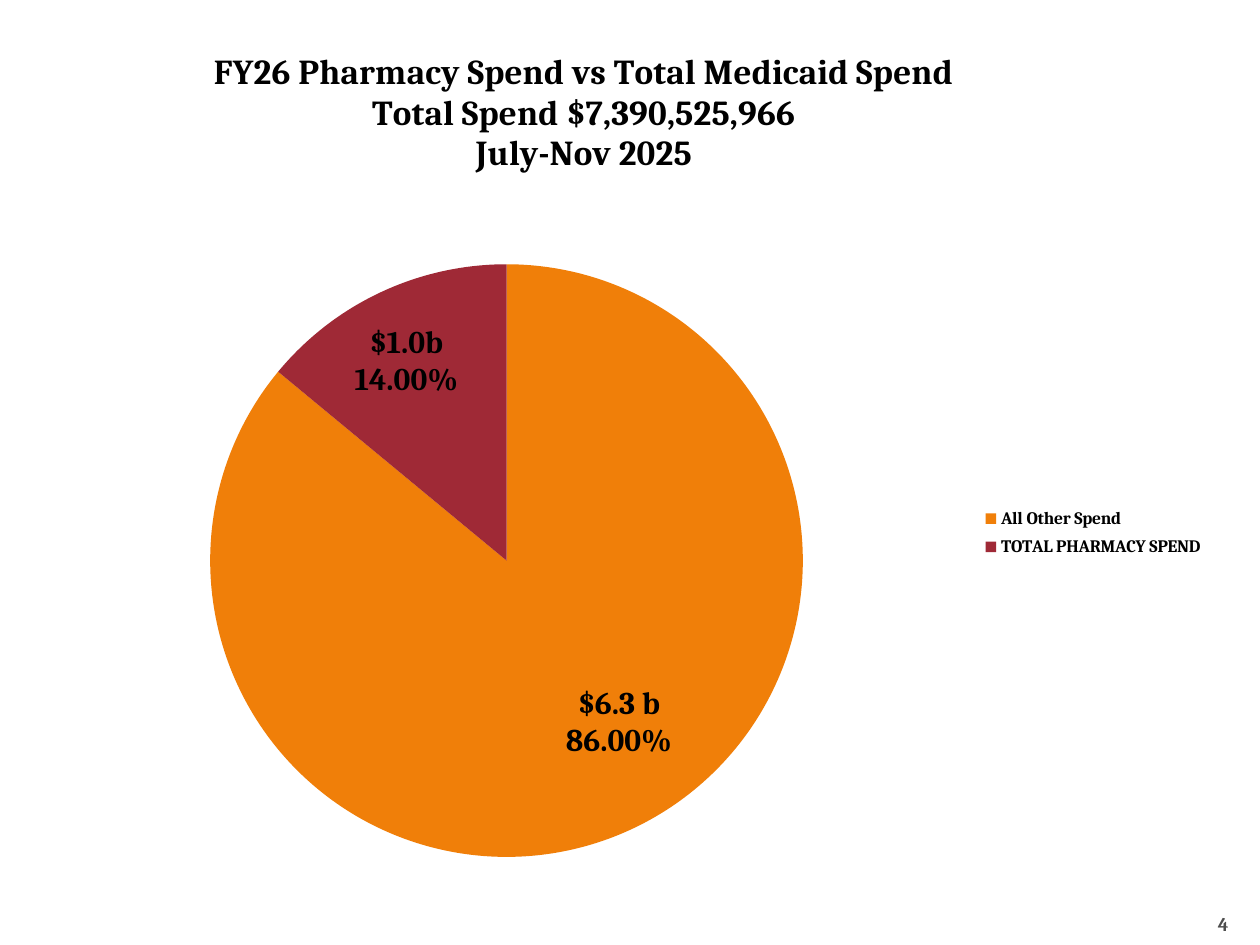
import pptx
import pptx.chart.data
import pptx.dml.color
import pptx.enum.chart
import pptx.enum.text
import pptx.oxml
import pptx.oxml.ns
import pptx.util

FONT = "Cambria"
WIDE, HIGH = pptx.util.Inches(10), pptx.util.Inches(7.5)
TITLE = ["FY26 Pharmacy Spend vs Total Medicaid Spend",
         "Total Spend $7,390,525,966", "July-Nov 2025"]
# Name, share, colour, label lines, label shift from the slice centre
SLICES = [
    ("All Other Spend", 86, "F07F09", ["$6.3 b", "86.00%"], (0.04, 0.03)),
    ("TOTAL PHARMACY SPEND", 14, "9F2936", ["$1.0b", "14.00%"], (-0.03, -0.07)),
]


def paint(hue):
    return pptx.dml.color.RGBColor.from_string(hue)


def style(font, size, hue="000000"):
    font.name, font.size, font.bold = FONT, pptx.util.Pt(size), True
    font.color.rgb = paint(hue)


def write(frame, lines, size):
    for i, line in enumerate(lines):
        para = frame.paragraphs[0] if i == 0 else frame.add_paragraph()
        run = para.add_run()
        run.text = line
        style(run.font, size)


def place(node, index, edge, **sizes):
    """Give a chart part a manual layout in shares of the chart."""
    for old in node.findall(pptx.oxml.ns.qn("c:layout")):
        node.remove(old)
    modes = {key + "Mode": "edge" for key in "xy"} if edge else {}
    parts = "".join(f'<c:{key} val="{val}"/>'
                    for key, val in {**modes, **sizes}.items())
    node.insert(index, pptx.oxml.parse_xml(
        f'<c:layout {pptx.oxml.ns.nsdecls("c")}><c:manualLayout>'
        f'{parts}</c:manualLayout></c:layout>'))


def add_pie(slide, x, y, w, h):
    data = pptx.chart.data.CategoryChartData()
    data.categories = [row[0] for row in SLICES]
    data.add_series("Series 1", [row[1] for row in SLICES])
    chart = slide.shapes.add_chart(
        pptx.enum.chart.XL_CHART_TYPE.PIE, int(x * WIDE), int(y * HIGH),
        int(w * WIDE), int(h * HIGH), data).chart
    style(chart.font, 10)

    # Title
    chart.has_title = True
    write(chart.chart_title.text_frame, TITLE, 20)
    place(chart.chart_title._element, 1, True, x=0.16, y=0.03)

    # Legend
    chart.has_legend = True
    legend = chart.legend
    legend.position = pptx.enum.chart.XL_LEGEND_POSITION.RIGHT
    legend.include_in_layout = False
    style(legend.font, 10)
    place(legend._element, 1, True, x=0.78, y=0.52, w=0.19, h=0.07)

    # Slices and their labels
    plot = chart.plots[0]
    plot.vary_by_categories = True
    place(plot._element.getparent(), 0, True, x=0.16, y=0.26, w=0.48, h=0.65)
    for i, (_, _, hue, lines, (dx, dy)) in enumerate(SLICES):
        point = plot.series[0].points[i]
        point.format.fill.solid()
        point.format.fill.fore_color.rgb = paint(hue)
        label = point.data_label
        write(label.text_frame, lines, 18)
        label.position = pptx.enum.chart.XL_LABEL_POSITION.CENTER
        node = label.text_frame._txBody.getparent().getparent()
        place(node, 1, False, x=dx, y=dy)


def add_number(slide, x, y, w, h):
    frame = slide.shapes.add_textbox(int(x * WIDE), int(y * HIGH),
                                     int(w * WIDE), int(h * HIGH)).text_frame
    frame.word_wrap = True
    frame.margin_left = frame.margin_right = frame.margin_bottom = 0
    frame.vertical_anchor = pptx.enum.text.MSO_ANCHOR.BOTTOM
    para = frame.paragraphs[0]
    para.text = "4"
    para.alignment = pptx.enum.text.PP_ALIGN.RIGHT
    style(para.font, 11, "4D4D4D")


def main():
    deck = pptx.Presentation()
    deck.slide_width, deck.slide_height = WIDE, HIGH
    slide = deck.slides.add_slide(deck.slide_layouts[6])
    add_number(slide, 0.925, 0.94, 0.05, 0.05)
    add_pie(slide, 0.01, 0.02, 0.98, 0.98)
    deck.save("out.pptx")


if __name__ == "__main__":
    main()
